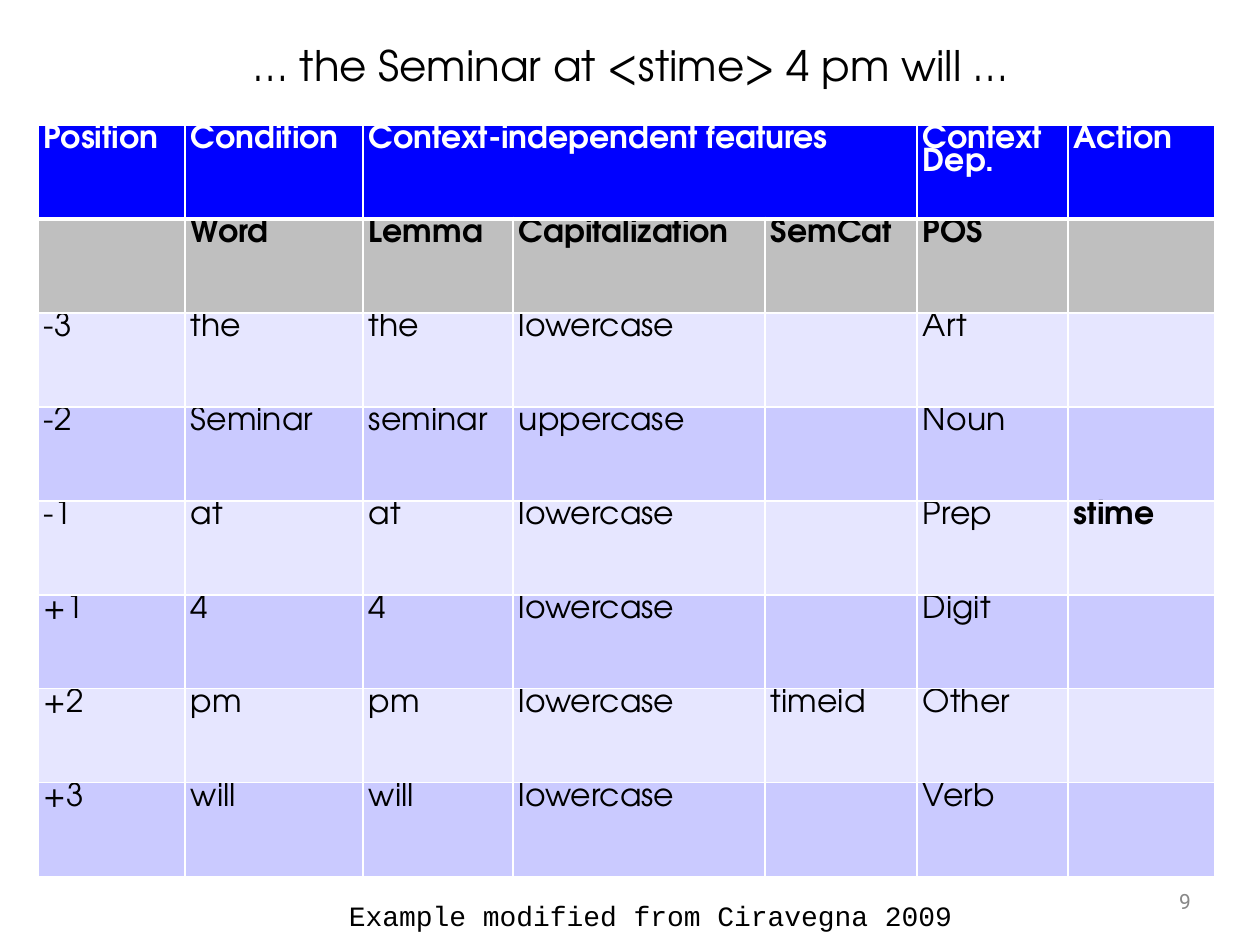
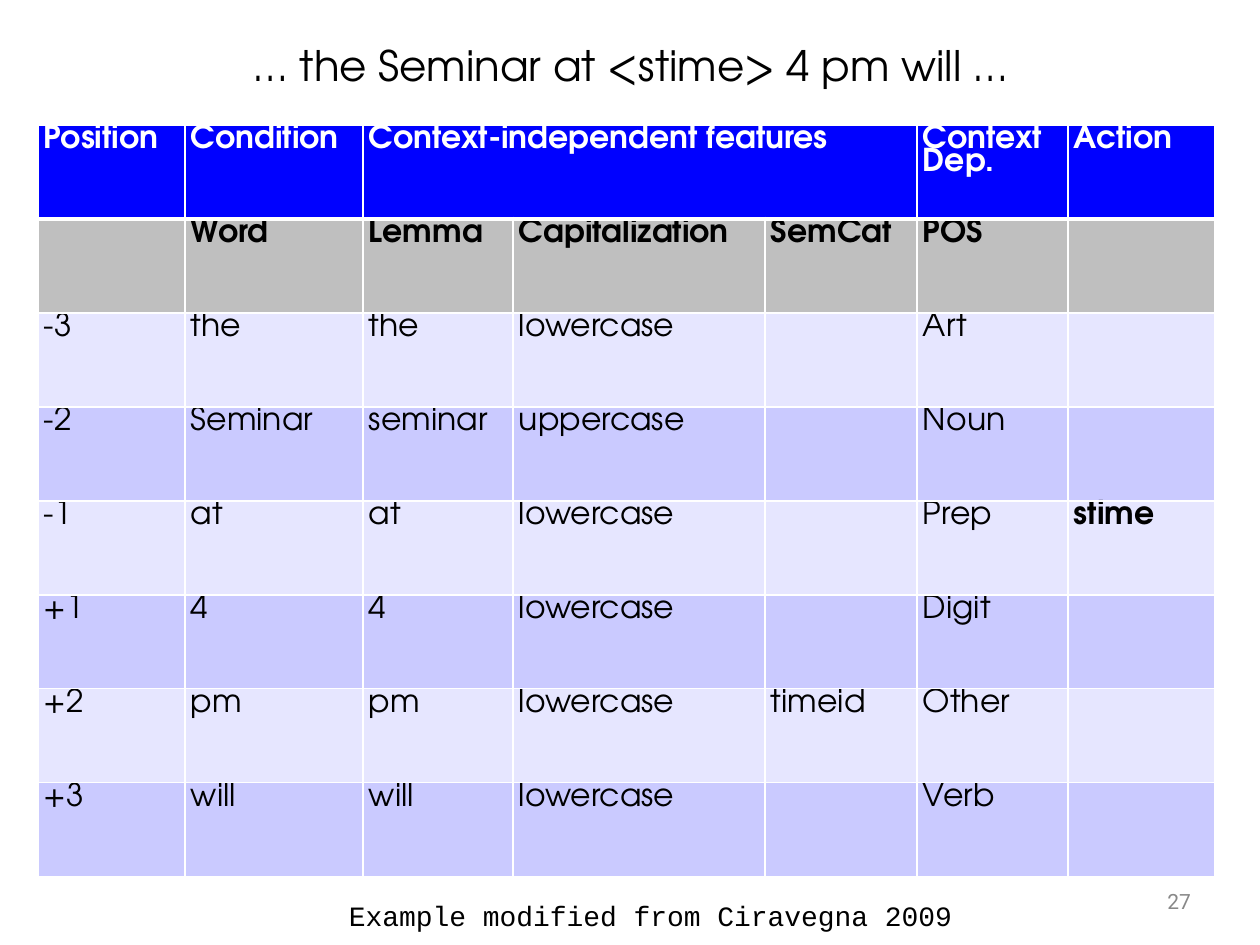
from lxml import etree
from pptx import Presentation
from pptx import util as u
from pptx.dml.color import RGBColor
from pptx.enum import text
from pptx.oxml import ns

PAGE_NUMBERS = ["9", "27"]
TITLE = "… the Seminar at <stime> 4 pm will …"
CREDIT = "Example modified from Ciravegna 2009"
ROWS = [
    ["Position", "Condition", "Context-independent features", "", "", "Context Dep.", "Action"],
    ["", "Word", "Lemma", "Capitalization", "SemCat", "POS", ""],
    ["-3", "the", "the", "lowercase", "", "Art", ""],
    ["-2", "Seminar", "seminar", "uppercase", "", "Noun", ""],
    ["-1", "at", "at", "lowercase", "", "Prep", "stime"],
    ["+1", "4", "4", "lowercase", "", "Digit", ""],
    ["+2", "pm", "pm", "lowercase", "timeid", "Other", ""],
    ["+3", "will", "will", "lowercase", "", "Verb", ""],
]
FEATURE_COLUMNS = (2, 4)
ACTION_COLUMN = 6

# Lengths in px, 126 to the inch
COLUMN_WIDTHS = [147, 178, 150, 252, 152, 151, 147]
ROW_HEIGHT = 94
TABLE_LEFT, TABLE_TOP = 38, 125
TITLE_BOX = (248, 34, 961, 63)
CREDIT_BOX = (343, 892, 631, 44)
NUMBER_BOX = (1097, 882, 100, 39)
INSET = 6

HEADER_FILL, SUBHEADER_FILL = "0001FF", "BFBFBF"
BAND_FILLS = ["E6E6FF", "CACAFF"]
WHITE, BLACK, GREY = "FFFFFF", "000000", "888888"
MAIN_FONT, CREDIT_FONT, NUMBER_FONT = "TeX Gyre Adventor", "Courier New", "Roboto"
CELL_LINE_SPACING = 0.77


def px(length):
    return u.Emu(round(length * 914400 / 126))


def color(code):
    return RGBColor.from_string(code)


def set_margins(holder):
    """Give a cell or a text frame the shared inset."""
    holder.margin_left = holder.margin_right = px(INSET)
    holder.margin_top = holder.margin_bottom = px(INSET)


def style(para, font, size, code, bold=False):
    para.font.name = font
    para.font.size = u.Pt(size)
    para.font.color.rgb = color(code)
    para.font.bold = bold


def fill_box(box, place, words, font, size, code,
             align=text.PP_ALIGN.LEFT, anchor=text.MSO_ANCHOR.TOP):
    """Place a text box or title and write one line in it."""
    box.left, box.top, box.width, box.height = map(px, place)
    frame = box.text_frame
    frame.text = words
    frame.word_wrap = True
    frame.auto_size = text.MSO_AUTO_SIZE.NONE
    frame.vertical_anchor = anchor
    set_margins(frame)
    para = frame.paragraphs[0]
    para.alignment = align
    style(para, font, size, code)


def add_text(page, *content, **layout):
    fill_box(page.shapes.add_textbox(0, 0, 0, 0), *content, **layout)


def add_borders(cell, row):
    """Draw white cell edges, thicker under the header row."""
    points = {"L": 1, "R": 1, "T": 3 if row == 1 else 1, "B": 3 if row == 0 else 1}
    for side, width in points.items():
        line = etree.SubElement(cell._tc.get_or_add_tcPr(), ns.qn(f"a:ln{side}"), w=str(u.Pt(width)))
        solid = etree.SubElement(line, ns.qn("a:solidFill"))
        etree.SubElement(solid, ns.qn("a:srgbClr"), val=WHITE)


def row_fill(row):
    return [HEADER_FILL, SUBHEADER_FILL][row] if row < 2 else BAND_FILLS[row % 2]


def add_feature_table(page):
    frame = page.shapes.add_table(
        len(ROWS), len(COLUMN_WIDTHS), px(TABLE_LEFT), px(TABLE_TOP),
        px(sum(COLUMN_WIDTHS)), px(ROW_HEIGHT * len(ROWS)))
    table = frame.table
    table.first_row = table.horz_banding = False
    for column, width in zip(table.columns, COLUMN_WIDTHS):
        column.width = px(width)
    first, last = FEATURE_COLUMNS
    table.cell(0, first).merge(table.cell(0, last))

    for r, words in enumerate(ROWS):
        table.rows[r].height = px(ROW_HEIGHT)
        for c, word in enumerate(words):
            cell = table.cell(r, c)
            add_borders(cell, r)
            cell.fill.solid()
            cell.fill.fore_color.rgb = color(row_fill(r))
            set_margins(cell)
            if word:
                cell.text = word
                para = cell.text_frame.paragraphs[0]
                para.line_spacing = CELL_LINE_SPACING
                style(para, MAIN_FONT, 18, WHITE if r == 0 else BLACK,
                      bold=r < 2 or c == ACTION_COLUMN)


def add_seminar_page(deck, number):
    page = deck.slides.add_slide(deck.slide_layouts[5])
    add_text(page, NUMBER_BOX, number, NUMBER_FONT, 12, GREY,
             align=text.PP_ALIGN.RIGHT, anchor=text.MSO_ANCHOR.MIDDLE)
    add_feature_table(page)
    fill_box(page.shapes.title, TITLE_BOX, TITLE, MAIN_FONT, 24, BLACK)
    add_text(page, CREDIT_BOX, CREDIT, CREDIT_FONT, 16, BLACK)


def main():
    deck = Presentation()
    deck.slide_width, deck.slide_height = px(1260), px(945)
    for number in PAGE_NUMBERS:
        add_seminar_page(deck, number)
    deck.save("out.pptx")


if __name__ == "__main__":
    main()
